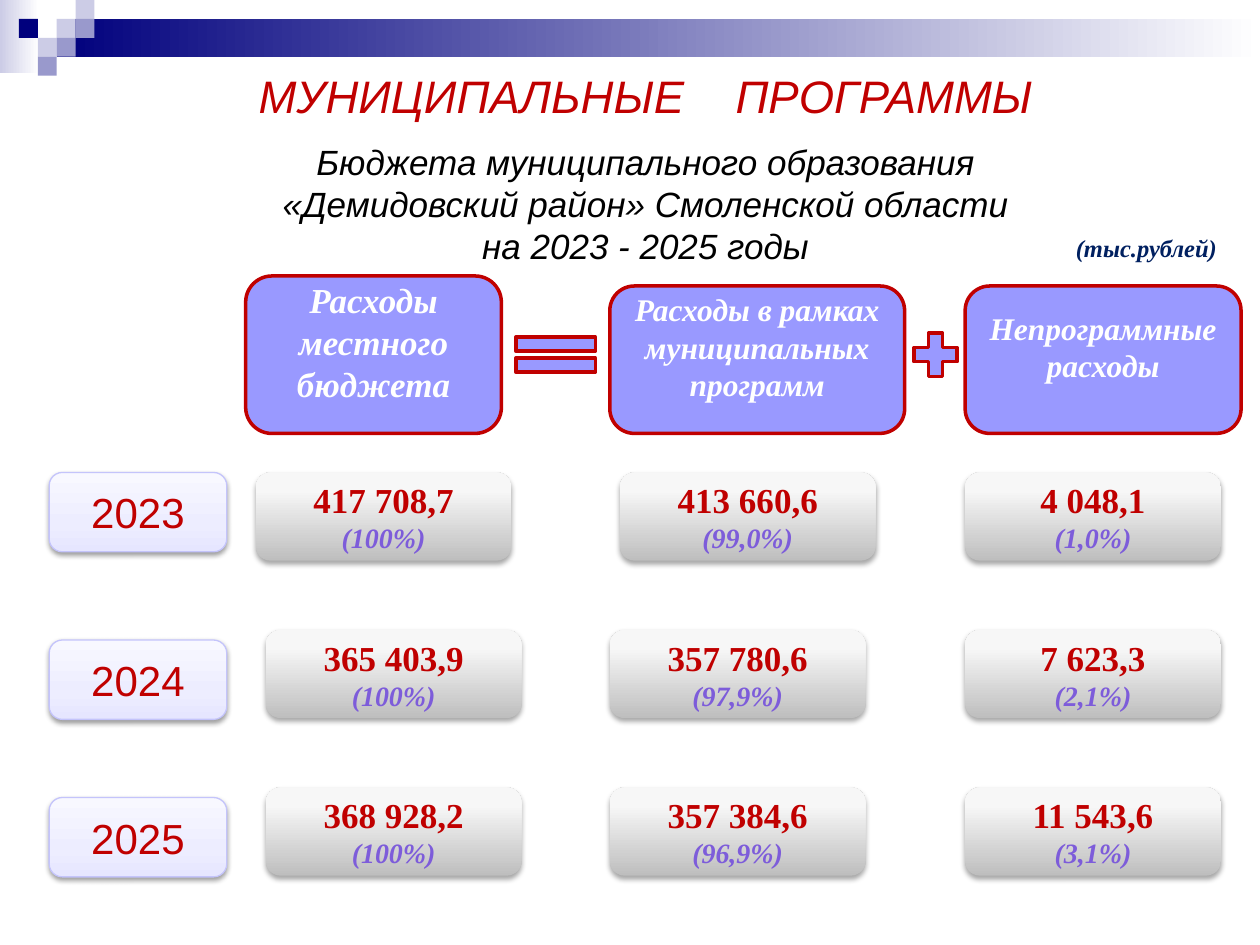
from lxml import etree
from pptx import Presentation
from pptx.dml.color import RGBColor
from pptx.enum import shapes, text
from pptx.oxml.ns import qn
from pptx.util import Inches, Pt

C = {
    "navy": "00007D", "lilac": "CCCCE6", "blue": "9999CC", "white": "FFFFFF",
    "violet": "9999FF", "red": "C00000", "share": "7D5CDA", "black": "000000",
    "unit": "002060", "edge": "C4C4FB",
}
STOPS = {
    "corner": [(0, C["lilac"]), (100, C["white"])],
    "band": [(0, C["navy"]), (100, C["white"])],
    "value": [(0, "BEBEBE"), (80, "F7F7F7"), (100, "F8F8F8")],
    "year": [(0, "E6E6FF"), (35, "EDEDFF"), (100, "F8F8FF")],
}
SERIF = "Times New Roman"
M = shapes.MSO_SHAPE

prs = Presentation()
prs.slide_width, prs.slide_height = Inches(10), Inches(7.5)
slide = prs.slides.add_slide(prs.slide_layouts[6])


def add_box(kind, box, fill, line=None, width=2, angle=0, shadow=None):
    s = slide.shapes.add_shape(kind, *[Inches(v) for v in box])
    if fill in STOPS:
        s.fill.gradient()
        s.fill.gradient_angle = angle
        stops = s._element.spPr.find(".//" + qn("a:gsLst"))
        stops.clear()
        for pos, color in STOPS[fill]:
            gs = etree.SubElement(stops, qn("a:gs"), pos=str(pos * 1000))
            etree.SubElement(gs, qn("a:srgbClr"), val=color)
    else:
        s.fill.solid()
        s.fill.fore_color.rgb = RGBColor.from_string(C[fill])
    if line:
        s.line.color.rgb = RGBColor.from_string(C[line])
        s.line.width = Pt(width)
    else:
        s.line.fill.background()
    s.shadow.inherit = False
    if shadow:
        alpha, blur, dist = shadow
        effects = s._element.spPr.find(qn("a:effectLst"))
        sh = etree.SubElement(effects, qn("a:outerShdw"), blurRad=str(Pt(blur)),
                              dist=str(Pt(dist)), dir="5400000", rotWithShape="0")
        clr = etree.SubElement(sh, qn("a:srgbClr"), val=C["black"])
        etree.SubElement(clr, qn("a:alpha"), val=str(alpha * 1000))
    return s


def write(tf, lines, anchor=text.MSO_ANCHOR.MIDDLE):
    tf.vertical_anchor = anchor
    tf.word_wrap = True
    tf.text = "\n".join(line[0] for line in lines)
    for p, (_, size, font, color, bold, italic) in zip(tf.paragraphs, lines):
        p.alignment = text.PP_ALIGN.CENTER
        for r in p.runs:
            r.font.size, r.font.name = Pt(size), font
            r.font.bold, r.font.italic = bold, italic
            r.font.color.rgb = RGBColor.from_string(C[color])


add_box(M.RECTANGLE, (0, 0, 0.31, 0.58), "corner")
add_box(M.RECTANGLE, (0.45, 0.15, 9.55, 0.3), "band")
for col, row, color in [(3, 1, "lilac"), (4, 0, "lilac"), (4, 1, "blue"), (2, 2, "lilac"),
                        (1, 1, "navy"), (3, 2, "blue"), (2, 3, "blue")]:
    add_box(M.RECTANGLE, (col * 0.15, row * 0.15, 0.15, 0.15), color)

tb = slide.shapes.add_textbox(Inches(0.86), Inches(0), Inches(8.53), Inches(2.44))
tf = tb.text_frame
tf.margin_top = Inches(0.54)
subtitle = ["Бюджета муниципального образования",
            "«Демидовский район» Смоленской области",
            "на 2023 - 2025 годы"]
write(tf, [("МУНИЦИПАЛЬНЫЕ", 26, "Arial", "red", False, True)]
      + [(t, 20, "Arial", "black", False, True) for t in subtitle], text.MSO_ANCHOR.TOP)
p = tf.paragraphs[0]
for part, spacing in [(" ", 2170), ("ПРОГРАММЫ", 0)]:
    r = p.add_run()
    r.text = part
    r.font.size, r.font.name, r.font.italic = Pt(26), "Arial", True
    r.font.color.rgb = RGBColor.from_string(C["red"])
    r._r.get_or_add_rPr().set("spc", str(spacing))
tf.paragraphs[1].space_before = Pt(10)

headers = [((1.95, 2.19, 2.03, 1.25), "Расходы местного бюджета", 20),
           ((4.84, 2.27, 2.34, 1.17), "Расходы в рамках муниципальных программ", 18),
           ((7.66, 2.27, 2.19, 1.17), "Непрограммные расходы", 18)]
for box, title, size in headers:
    s = add_box(M.ROUNDED_RECTANGLE, box, "violet", "red")
    s.text_frame.margin_top, s.text_frame.margin_bottom = 0, Inches(0.21)
    write(s.text_frame, [(title, size, SERIF, "white", True, True)])
add_box(M.MATH_EQUAL, (3.98, 2.58, 0.86, 0.47), "violet", "red")
add_box(M.MATH_PLUS, (7.19, 2.58, 0.47, 0.47), "violet", "red")

rows = [
    ("2023", 3.75, 3.75, (2.03, 4.92, 7.66),
     [("417 708,7", "(100%)"), ("413 660,6", "(99,0%)"), ("4 048,1", "(1,0%)")]),
    ("2024", 5.08, 5, (2.11, 4.84, 7.66),
     [("365 403,9", "(100%)"), ("357 780,6", "(97,9%)"), ("7 623,3", "(2,1%)")]),
    ("2025", 6.33, 6.25, (2.11, 4.84, 7.66),
     [("368 928,2", "(100%)"), ("357 384,6", "(96,9%)"), ("11 543,6", "(3,1%)")]),
]
for year, year_top, top, lefts, values in rows:
    s = add_box(M.ROUNDED_RECTANGLE, (0.39, year_top, 1.41, 0.63), "year", "edge", 0.75,
                angle=90, shadow=(38, 3.1, 1.6))
    write(s.text_frame, [(year, 24, "Arial", "red", False, False)])
    for left, (amount, share) in zip(lefts, values):
        s = add_box(M.ROUNDED_RECTANGLE, (left, top, 2.03, 0.7), "value",
                    angle=90, shadow=(35, 3.1, 1.8))
        s.text_frame.margin_top = s.text_frame.margin_bottom = 0
        write(s.text_frame, [(amount, 20, SERIF, "red", True, False),
                             (share, 16, SERIF, "share", True, True)])

tb = slide.shapes.add_textbox(Inches(8.44), Inches(1.8), Inches(1.33), Inches(0.34))
write(tb.text_frame, [("(тыс.рублей)", 14, SERIF, "unit", True, True)], text.MSO_ANCHOR.TOP)
tb.text_frame.word_wrap = False
tb.text_frame.paragraphs[0].alignment = text.PP_ALIGN.LEFT

prs.save("out.pptx")
